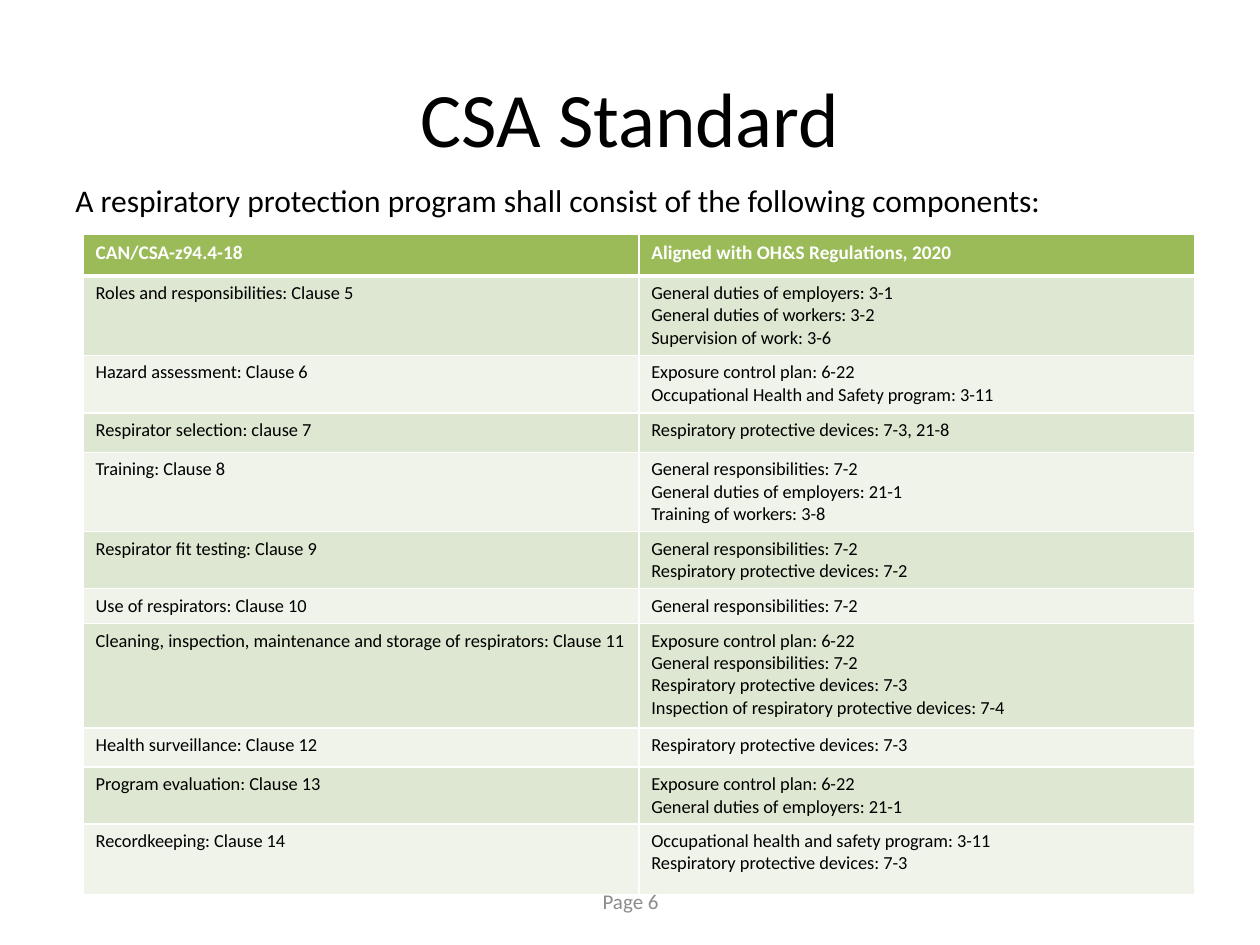
from dataclasses import dataclass

import pptx
import pptx.dml.color
import pptx.enum.text
import pptx.oxml
import pptx.oxml.ns
import pptx.util
from pptx.util import Inches

ALIGN = pptx.enum.text.PP_ALIGN
ANCHOR = pptx.enum.text.MSO_ANCHOR


@dataclass(frozen=True)
class Theme:
    font: str = "Calibri"
    text: str = "000000"
    white: str = "FFFFFF"
    footer: str = "8C8C8C"
    header_fill: str = "9BBB59"
    bands: tuple = ("DEE7D1", "EFF3EA")
    title_size: float = 44
    lead_size: float = 18
    header_size: float = 11
    cell_size: float = 10.5
    footer_size: float = 12


THEME = Theme()

HEADER = ("CAN/CSA-z94.4-18", "Aligned with OH&S Regulations, 2020")

# Row height in inches, CSA clause, matching regulations
ROWS = [
    (0.63, "Roles and responsibilities: Clause 5",
     ["General duties of employers: 3-1", "General duties of workers: 3-2",
      "Supervision of work: 3-6"]),
    (0.46, "Hazard assessment: Clause 6",
     ["Exposure control plan: 6-22",
      "Occupational Health and Safety program: 3-11"]),
    (0.31, "Respirator selection: clause 7",
     ["Respiratory protective devices: 7-3, 21-8"]),
    (0.63, "Training: Clause 8",
     ["General responsibilities: 7-2", "General duties of employers: 21-1",
      "Training of workers: 3-8"]),
    (0.45, "Respirator fit testing: Clause 9",
     ["General responsibilities: 7-2", "Respiratory protective devices: 7-2"]),
    (0.28, "Use of respirators: Clause 10",
     ["General responsibilities: 7-2"]),
    (0.83, "Cleaning, inspection, maintenance and storage of respirators: Clause 11",
     ["Exposure control plan: 6-22", "General responsibilities: 7-2",
      "Respiratory protective devices: 7-3",
      "Inspection of respiratory protective devices: 7-4"]),
    (0.31, "Health surveillance: Clause 12",
     ["Respiratory protective devices: 7-3"]),
    (0.45, "Program evaluation: Clause 13",
     ["Exposure control plan: 6-22", "General duties of employers: 21-1"]),
    (0.56, "Recordkeeping: Clause 14",
     ["Occupational health and safety program: 3-11",
      "Respiratory protective devices: 7-3"]),
]
HEADER_HEIGHT = 0.33


def rgb(color):
    return pptx.dml.color.RGBColor.from_string(color)


def write(tf, lines, size, color, bold=False, align=ALIGN.LEFT):
    for i, line in enumerate(lines):
        p = tf.add_paragraph() if i else tf.paragraphs[0]
        p.alignment = align
        r = p.add_run()
        r.text = line
        r.font.name = THEME.font
        r.font.size = pptx.util.Pt(size)
        r.font.bold = bold
        r.font.color.rgb = rgb(color)


def add_title(s, box, text):
    sp = s.shapes.title
    sp.left, sp.top, sp.width, sp.height = box
    sp.text_frame.vertical_anchor = ANCHOR.MIDDLE
    write(sp.text_frame, [text], THEME.title_size, THEME.text, align=ALIGN.CENTER)


def add_text(s, box, text, size, color, align=ALIGN.LEFT, anchor=ANCHOR.TOP):
    tf = s.shapes.add_textbox(*box).text_frame
    tf.word_wrap = True
    tf.vertical_anchor = anchor
    write(tf, [text], size, color, align=align)


def set_borders(cell, bottom, top):
    """Draw white cell edges, with widths in points for the bottom and top."""
    tc_pr = cell._tc.get_or_add_tcPr()
    for i, (side, width) in enumerate((("L", 1), ("R", 1), ("T", top), ("B", bottom))):
        ln = pptx.oxml.parse_xml(
            f'<a:ln{side} {pptx.oxml.ns.nsdecls("a")} w="{pptx.util.Pt(width)}">'
            f'<a:solidFill><a:srgbClr val="{THEME.white}"/></a:solidFill></a:ln{side}>')
        tc_pr.insert(i, ln)


def fill_cell(cell, lines, fill, size, color, bold=False, top=1, bottom=1):
    cell.fill.solid()
    cell.fill.fore_color.rgb = rgb(fill)
    set_borders(cell, bottom, top)
    write(cell.text_frame, lines, size, color, bold)


def add_clause_table(s, box):
    table = s.shapes.add_table(len(ROWS) + 1, len(HEADER), *box).table
    for column in table.columns:
        column.width = box[2] // len(HEADER)

    table.rows[0].height = Inches(HEADER_HEIGHT)
    for c, label in enumerate(HEADER):
        fill_cell(table.cell(0, c), [label], THEME.header_fill,
                  THEME.header_size, THEME.white, bold=True, bottom=3)

    for i, (height, clause, regulations) in enumerate(ROWS):
        table.rows[i + 1].height = Inches(height)
        for c, lines in enumerate(([clause], regulations)):
            fill_cell(table.cell(i + 1, c), lines, THEME.bands[i % 2],
                      THEME.cell_size, THEME.text, top=1 if i else 3)


def main():
    prs = pptx.Presentation()
    prs.slide_width, prs.slide_height = Inches(10), Inches(7.5)
    s = prs.slides.add_slide(prs.slide_layouts[5])

    add_title(s, (Inches(0.5), Inches(0.3), Inches(9), Inches(1.25)), "CSA Standard")
    add_text(s, (Inches(0.5), Inches(1.39), Inches(9), Inches(5.31)),
             "A respiratory protection program shall consist of the following components:",
             THEME.lead_size, THEME.text)
    table_height = HEADER_HEIGHT + sum(row[0] for row in ROWS)
    add_clause_table(s, (Inches(0.66), Inches(1.86), Inches(8.82), Inches(table_height)))
    add_text(s, (Inches(3.42), Inches(6.95), Inches(3.17), Inches(0.4)), "Page 6",
             THEME.footer_size, THEME.footer, ALIGN.CENTER, ANCHOR.MIDDLE)

    prs.save("out.pptx")


if __name__ == "__main__":
    main()
